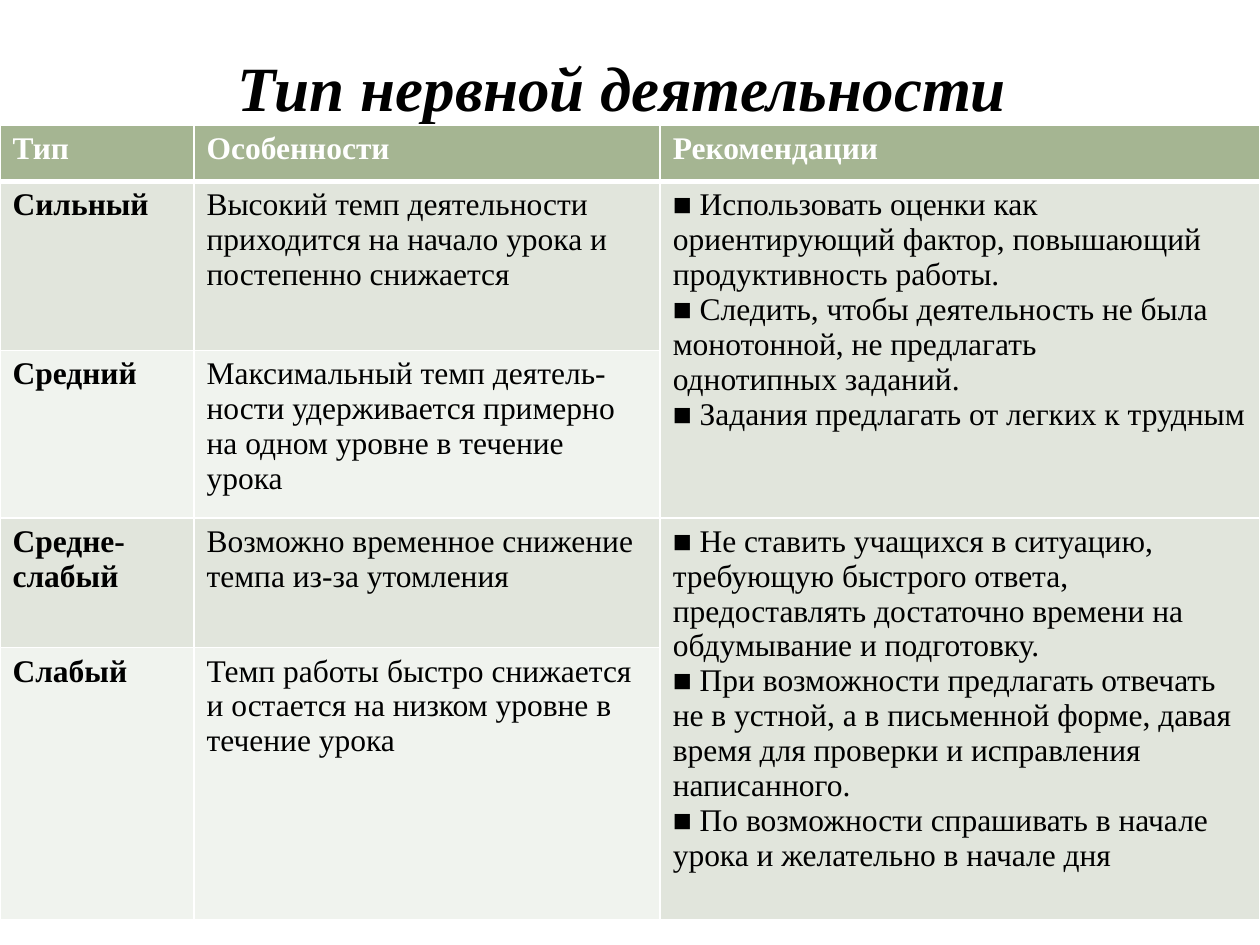
from lxml.etree import SubElement
from pptx import Presentation
from pptx.dml.color import RGBColor
from pptx.enum.text import MSO_ANCHOR, PP_ALIGN
from pptx.oxml.ns import qn
from pptx.util import Inches, Pt

FONT = "Times New Roman"


def color(code):
    return RGBColor.from_string(code)


def border(cell, side, width):
    line = SubElement(cell._tc.get_or_add_tcPr(), qn("a:" + side), w=str(Pt(width)))
    fill = SubElement(line, qn("a:solidFill"))
    SubElement(fill, qn("a:srgbClr"), val="FFFFFF")


deck = Presentation()
deck.slide_width, deck.slide_height = Inches(10), Inches(7.5)
slide = deck.slides.add_slide(deck.slide_layouts[6])

# Title
title = slide.shapes.add_textbox(Inches(0.5), Inches(0.3), Inches(9), Inches(0.77))
frame = title.text_frame
frame.word_wrap = True
frame.vertical_anchor = MSO_ANCHOR.MIDDLE
frame.text = "Тип нервной деятельности "
para = frame.paragraphs[0]
para.alignment = PP_ALIGN.CENTER
para.font.name, para.font.size = FONT, Pt(36)
para.font.bold = para.font.italic = True
para.font.color.rgb = color("000000")

# Table text: one advice cell serves two types
strong = """■ Использовать оценки как ориентирующий фактор, повышающий продуктивность работы.
■ Следить, чтобы деятельность не была монотонной, не предлагать
однотипных заданий.
■ Задания предлагать от легких к трудным"""
weak = """■ Не ставить учащихся в ситуацию, требующую быстрого ответа, предоставлять достаточно времени на обдумывание и подготовку.
■ При возможности предлагать отвечать не в устной, а в письменной форме, давая время для проверки и исправления написанного.
■ По возможности спрашивать в начале урока и желательно в начале дня"""
rows = [
    ("Тип", "Особенности", "Рекомендации"),
    ("Сильный", "Высокий темп деятельности приходится на начало урока и постепенно снижается", strong),
    ("Средний", "Максимальный темп деятель-ности удерживается примерно на одном уровне в течение урока", ""),
    ("Средне-слабый", "Возможно временное снижение темпа из-за утомления", weak),
    ("Слабый", "Темп работы быстро снижается и остается на низком уровне в течение урока", ""),
]
widths = [1.54, 3.7, 4.76]
heights = [0.45, 1.34, 1.33, 1.03, 2.16]

# Table grid
table = slide.shapes.add_table(
    len(rows), len(widths), Inches(0), Inches(0.99), Inches(10), Inches(sum(heights))
).table
for col, width in zip(table.columns, widths):
    col.width = Inches(width)
for row, height in zip(table.rows, heights):
    row.height = Inches(height)
for top in (1, 3):
    table.cell(top, 2).merge(table.cell(top + 1, 2))

# Cells: header, then bands of two shades
for r, texts in enumerate(rows):
    for c, text in enumerate(texts):
        cell = table.cell(r, c)
        for side in ("lnL", "lnR", "lnT", "lnB"):
            thick = (r, side) in ((0, "lnB"), (1, "lnT"))
            border(cell, side, 3 if thick else 1)
        shade = "A5B592" if r == 0 else "E1E5DC" if r % 2 or c == 2 else "F0F3EE"
        cell.fill.solid()
        cell.fill.fore_color.rgb = color(shade)
        if not text:
            continue
        cell.text = text
        for para in cell.text_frame.paragraphs:
            para.font.name, para.font.size = FONT, Pt(18)
            para.font.bold = r == 0 or c == 0
            para.font.color.rgb = color("FFFFFF" if r == 0 else "000000")

deck.save("out.pptx")
